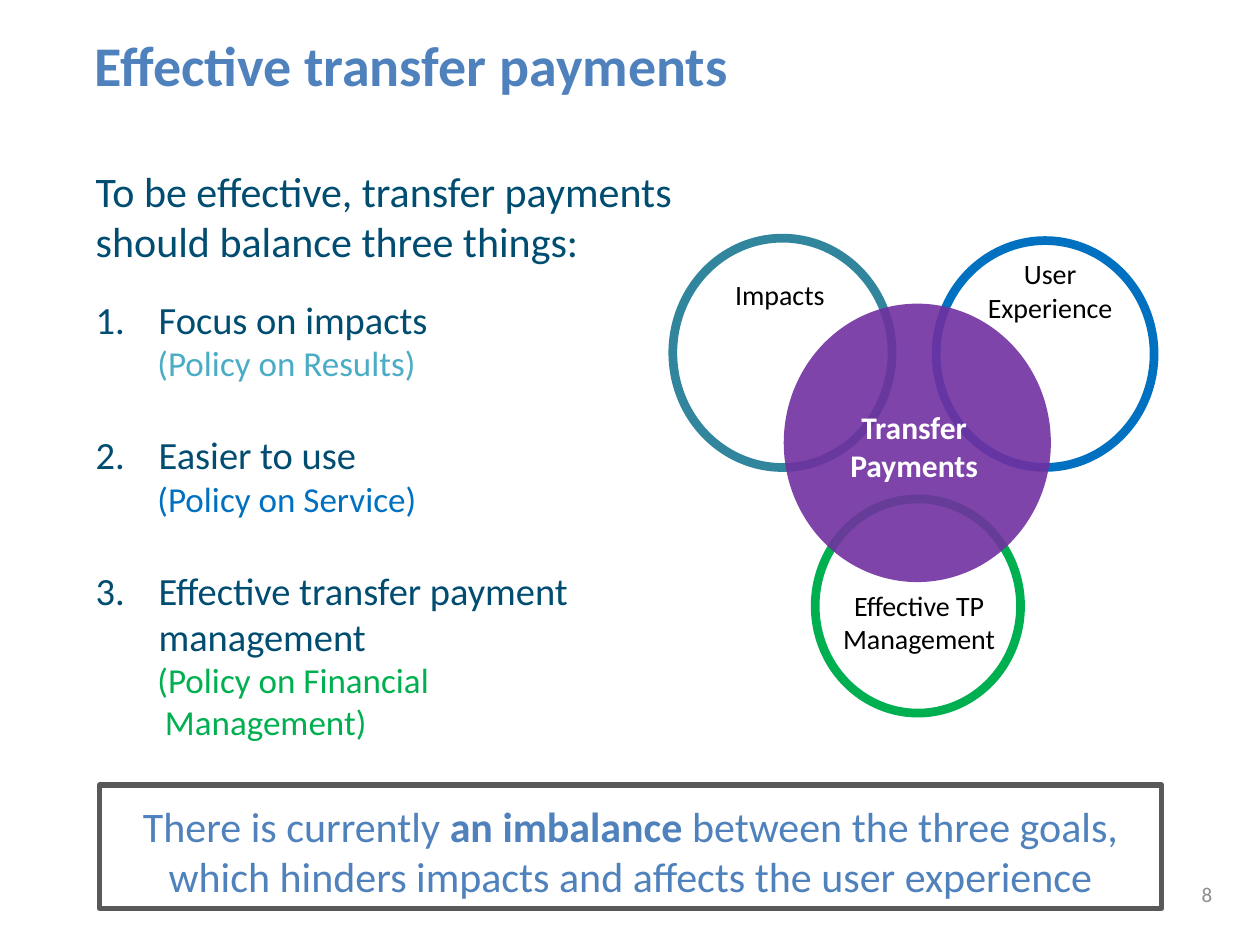
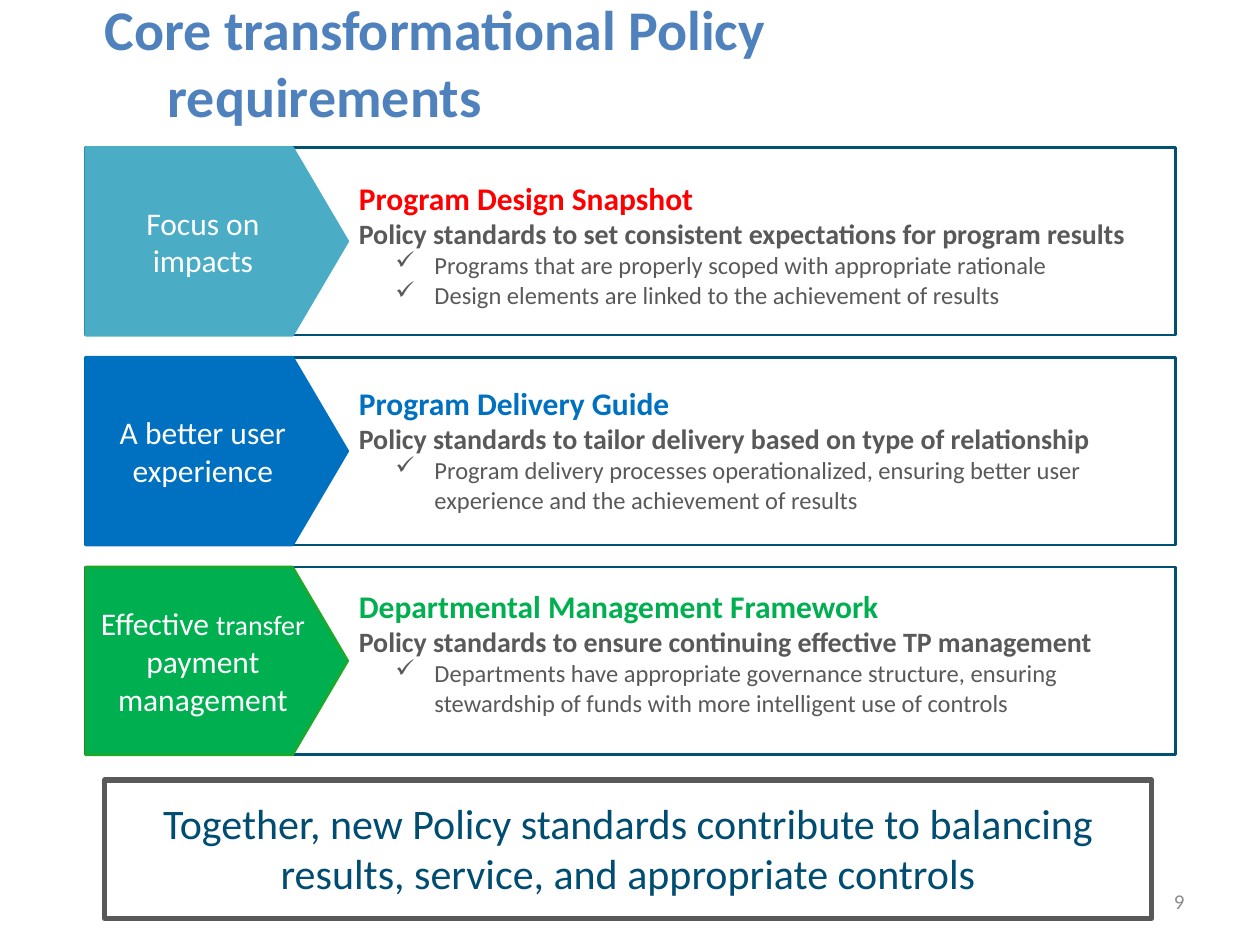
from lxml import etree
from pptx import Presentation
from pptx import util as u
from pptx.dml.color import RGBColor
from pptx.enum import shapes, text
from pptx.oxml import ns

COLUMNS, ROWS = 100, 75
FONT = "Calibri"
TITLE_BLUE = RGBColor(0x4F, 0x81, 0xBD)
NAVY = RGBColor(0x00, 0x4D, 0x71)
FRAME_NAVY = RGBColor(0x00, 0x51, 0x72)
AQUA = RGBColor(0x4B, 0xAC, 0xC6)
TEAL = RGBColor(0x31, 0x85, 0x9C)
BLUE = RGBColor(0x00, 0x70, 0xC0)
GREEN = RGBColor(0x00, 0xB0, 0x50)
GREEN_EDGE = RGBColor(0x1B, 0xA9, 0x2C)
PURPLE = RGBColor(0x70, 0x30, 0xA0)
RED = RGBColor(0xFF, 0x00, 0x00)
DARK_GREY = RGBColor(0x59, 0x59, 0x59)
PAGE_GREY = RGBColor(0x8C, 0x8C, 0x8C)
BLACK = RGBColor(0x00, 0x00, 0x00)
WHITE = RGBColor(0xFF, 0xFF, 0xFF)

CENTER, RIGHT = text.PP_ALIGN.CENTER, text.PP_ALIGN.RIGHT
TOP, MIDDLE = text.MSO_ANCHOR.TOP, text.MSO_ANCHOR.MIDDLE
OVAL = shapes.MSO_SHAPE.OVAL
RECTANGLE = shapes.MSO_SHAPE.RECTANGLE
PENTAGON = shapes.MSO_SHAPE.PENTAGON


def add_text(frame, content, size=18, color=BLACK, bold=False, align=None,
             before=0, margin=0, indent=0, number=None, bullet=None):
    paragraph = frame.paragraphs[0]
    if paragraph.runs:
        paragraph = frame.add_paragraph()
    if align is not None:
        paragraph.alignment = align
    if before:
        paragraph.space_before = u.Pt(before)
    properties = paragraph._p.get_or_add_pPr()
    if margin:
        properties.set("marL", str(u.Inches(margin)))
        properties.set("indent", str(u.Inches(indent)))
    if number:
        etree.SubElement(properties, ns.qn("a:buAutoNum"),
                         type="arabicPeriod", startAt=str(number))
    if bullet:
        etree.SubElement(properties, ns.qn("a:buChar"), char=bullet)
    pieces = [(content, {})] if isinstance(content, str) else content
    for words, changes in pieces:
        run = paragraph.add_run()
        run.text = words
        run.font.name = FONT
        run.font.size = u.Pt(changes.get("size", size))
        run.font.bold = changes.get("bold", bold)
        run.font.color.rgb = color


class Deck:
    def __init__(self):
        self.presentation = Presentation()
        self.presentation.slide_width = u.Inches(10)
        self.presentation.slide_height = u.Inches(7.5)
        self.slide = None

    def place(self, left, top, width, height):
        column = self.presentation.slide_width / COLUMNS
        row = self.presentation.slide_height / ROWS
        return (round(left * column), round(top * row),
                round(width * column), round(height * row))

    def start_slide(self):
        self.slide = self.presentation.slides.add_slide(
            self.presentation.slide_layouts[6])

    def set_frame(self, shape, anchor, inset):
        frame = shape.text_frame
        frame.word_wrap = True
        frame.vertical_anchor = anchor
        if inset is not None:
            frame.margin_left = frame.margin_right = u.Inches(inset)
            frame.margin_top = frame.margin_bottom = u.Inches(inset)
        return frame

    def text_box(self, grid, anchor=TOP, inset=None):
        box = self.slide.shapes.add_textbox(*self.place(*grid))
        return self.set_frame(box, anchor, inset)

    def shape(self, kind, grid, fill=None, line=None, weight=1.5,
              opacity=None, anchor=TOP, inset=None):
        shape = self.slide.shapes.add_shape(kind, *self.place(*grid))
        shape.shadow.inherit = False
        if fill is None:
            shape.fill.background()
        else:
            shape.fill.solid()
            shape.fill.fore_color.rgb = fill
        if opacity is not None:
            color = shape._element.spPr.find(".//" + ns.qn("a:srgbClr"))
            etree.SubElement(color, ns.qn("a:alpha"), val=str(opacity * 1000))
        if line is None:
            shape.line.fill.background()
        else:
            shape.line.color.rgb = line
            shape.line.width = u.Pt(weight)
        if kind == PENTAGON:
            shape.adjustments[0] = 0.294
        return self.set_frame(shape, anchor, inset)

    def title(self, words, grid):
        add_text(self.text_box(grid, MIDDLE, 0), words, size=32,
                 color=TITLE_BLUE, bold=True, margin=0.5, indent=-0.5)

    def page_number(self, number, left, top):
        add_text(self.text_box((left, top, 23.3, 4), MIDDLE), str(number),
                 size=12, color=PAGE_GREY, align=RIGHT)

    def conclusion_frame(self, grid):
        return self.shape(RECTANGLE, grid, line=DARK_GREY, weight=3, inset=0.12)

    def label(self, lines, grid, **style):
        frame = self.text_box(grid)
        for line in lines:
            add_text(frame, line, align=CENTER, **style)

    def band(self, top, label, fill, edge, heading, heading_color, standard,
             points, text_top, text_height):
        self.shape(RECTANGLE, (6.8, top, 86.5, 14.9), line=FRAME_NAVY)
        arrow = self.shape(PENTAGON, (6.8, top, 20.8, 14.9), fill, edge,
                           anchor=MIDDLE)
        add_text(arrow, label, color=WHITE, align=CENTER)
        frame = self.text_box((27.5, text_top, 65.6, text_height), MIDDLE)
        add_text(frame, heading, color=heading_color, bold=True)
        add_text(frame, standard, size=16, color=DARK_GREY, bold=True)
        for point in points:
            add_text(frame, point, size=14, color=DARK_GREY, margin=0.6,
                     indent=-0.31, bullet="✓")


def effective_payments(deck):
    deck.start_slide()
    deck.page_number(8, 73.9, 69)
    deck.title("Effective transfer payments", (7.5, 0.9, 89.8, 8.3))

    goals = [
        ("Focus on impacts", ["(Policy on Results)"], AQUA),
        ("Easier to use", ["(Policy on Service)"], BLUE),
        ("Effective transfer payment management",
         ["(Policy on Financial", "Management)"], GREEN),
    ]
    frame = deck.text_box((7.6, 13.1, 50.3, 46.9), inset=0)
    add_text(frame, "To be effective, transfer payments should balance "
             "three things:", size=24, color=NAVY)
    for number, (goal, policy, color) in enumerate(goals, 1):
        add_text(frame, goal, size=22, color=NAVY, margin=0.5, indent=-0.5,
                 before=17 if number == 1 else 27, number=number)
        for step, line in enumerate(policy):
            add_text(frame, line, size=20, color=color,
                     margin=0.49 + 0.06 * step)

    rings = [
        ((64.7, 39.6, 16.3, 17), GREEN),
        ((74.3, 19.1, 17.3, 18), BLUE),
        ((53.4, 18.9, 17.4, 18.2), TEAL),
    ]
    for grid, color in rings:
        deck.shape(OVAL, grid, line=color, weight=5)
    deck.label(["Effective TP Management"], (64.1, 46.2, 17.7, 6.4), size=16)
    deck.label(["Impacts"], (52.9, 21.5, 18, 3.7), size=16)
    deck.label(["User", "Experience"], (74.5, 19.9, 17.7, 6.4), size=16)
    deck.shape(OVAL, (62.2, 24.1, 21.2, 22.1), fill=PURPLE, opacity=90)
    deck.label(["Transfer Payments"], (65.7, 31.9, 13.7, 7.8), color=WHITE,
               bold=True)

    add_text(deck.conclusion_frame((7.9, 62.3, 84.3, 9.8)), [
        ("There is currently ", {}),
        ("an imbalance", {"bold": True}),
        (" between the three goals, which hinders impacts and affects "
         "the user experience", {}),
    ], size=24, color=TITLE_BLUE, align=CENTER)


def core_requirements(deck):
    deck.start_slide()
    deck.page_number(9, 71.7, 69.5)
    deck.title("Core transformational Policy requirements",
               (8.3, 0.1, 59.4, 9.6))
    deck.conclusion_frame((8.3, 61.9, 83.1, 11))
    deck.label(["Together, new Policy standards contribute to balancing",
                "results, service, and appropriate controls"],
               (9.1, 62.8, 81.5, 9.1), size=24, color=NAVY)

    bands = [
        ("Focus on impacts", AQUA, AQUA, "Program Design Snapshot", RED,
         "Policy standards to set consistent expectations for program results",
         ["Programs that are properly scoped with appropriate rationale",
          "Design elements are linked to the achievement of results"],
         11.9, 14.9),
        ("A better user experience", BLUE, BLUE, "Program Delivery Guide", BLUE,
         "Policy standards to tailor delivery based on type of relationship",
         ["Program delivery processes operationalized, ensuring better user "
          "experience and the achievement of results"],
         28.3, 14.7),
        ([("Effective ", {}), ("transfer", {"size": 16}),
          (" payment management", {})], GREEN, GREEN_EDGE,
         "Departmental Management Framework", GREEN,
         "Policy standards to ensure continuing effective TP management",
         ["Departments have appropriate governance structure, ensuring "
          "stewardship of funds with more intelligent use of controls"],
         45, 13.5),
    ]
    for index, band in enumerate(bands):
        deck.band(11.7 + 16.65 * index, *band)


def main():
    deck = Deck()
    effective_payments(deck)
    core_requirements(deck)
    deck.presentation.save("out.pptx")


if __name__ == "__main__":
    main()
